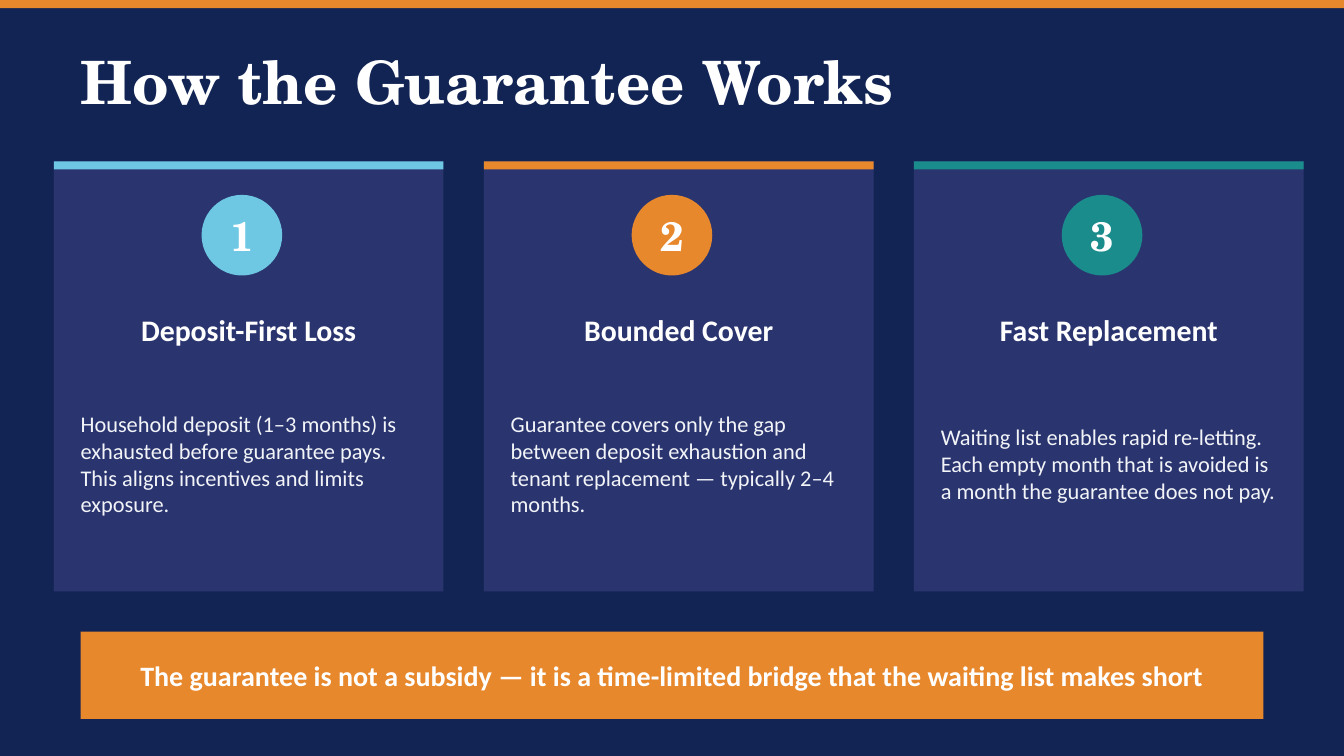
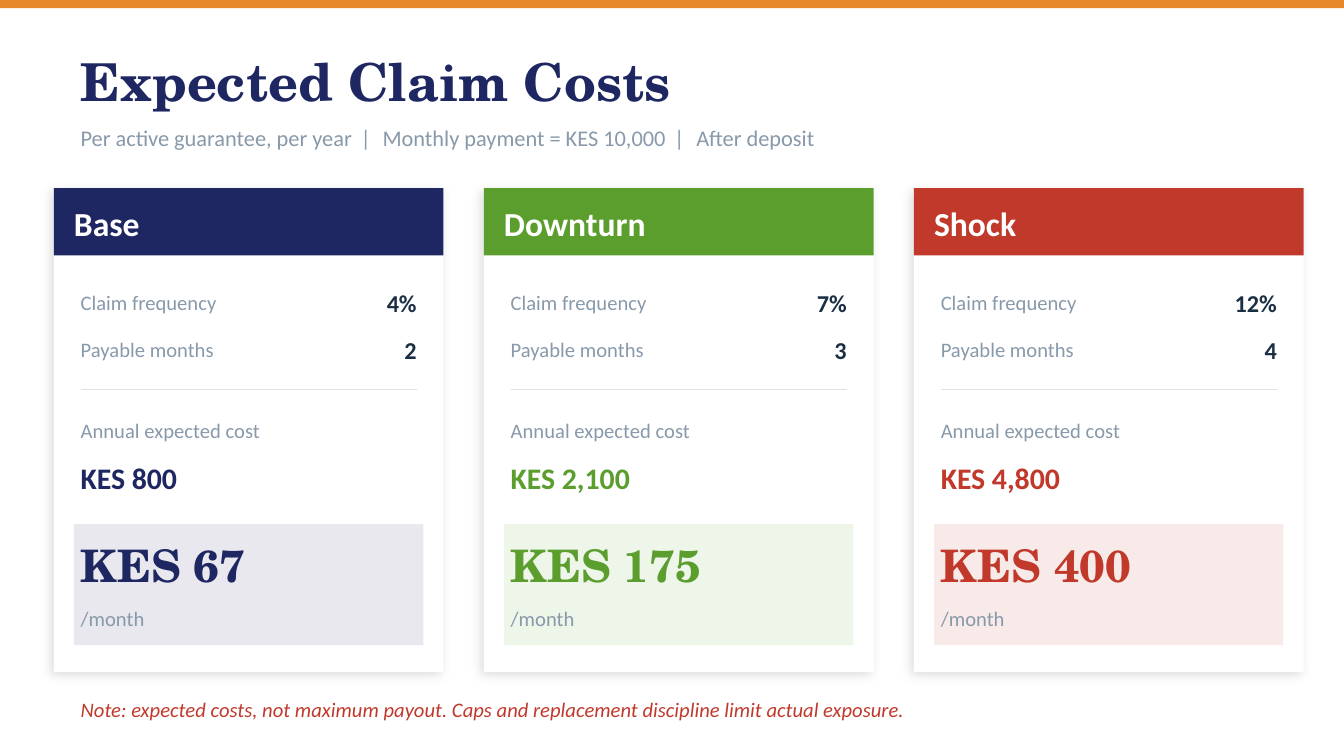
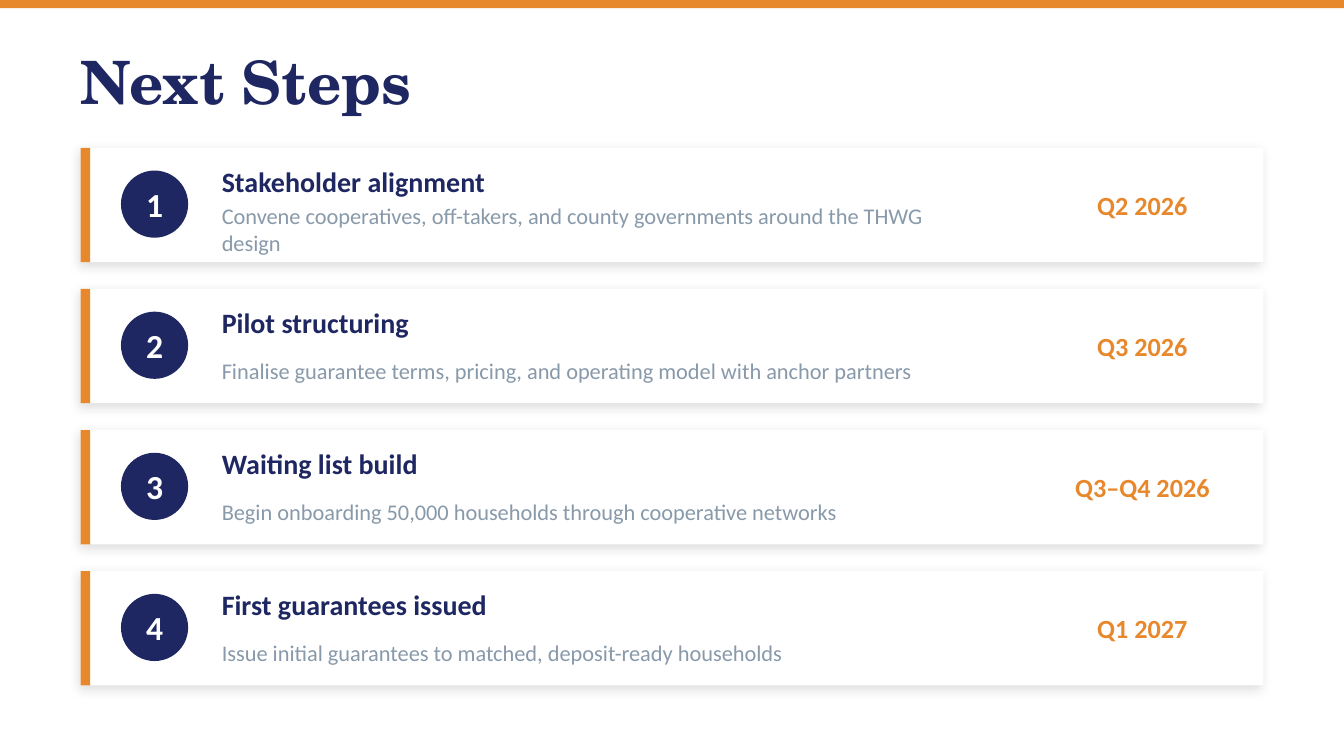
from dataclasses import dataclass

from lxml import etree
from pptx import Presentation
from pptx import util as u
from pptx.dml.color import RGBColor
from pptx.enum import shapes, text
from pptx.oxml.ns import qn


@dataclass(frozen=True)
class Theme:
    serif: str = "TeX Gyre Schola"
    sans: str = "Calibri"

    night: str = "122454"
    panel: str = "2A3570"
    navy: str = "1E2761"
    ink: str = "1A2E44"
    grey: str = "8899AA"
    rule: str = "E0E0E0"
    mist: str = "F2F4F7"
    white: str = "FFFFFF"
    black: str = "000000"
    orange: str = "E8882D"
    sky: str = "6EC8E4"
    teal: str = "1A8C8C"
    green: str = "5B9E2E"
    red: str = "C0392B"

    title: float = 42.7
    title_small: float = 37.3
    price: float = 32
    numeral: float = 29.3
    header: float = 24
    card_head: float = 21.3
    lead: float = 20
    date: float = 18.7
    value: float = 17.3
    body: float = 16
    label: float = 14.7


T = Theme()
RECT, OVAL = shapes.MSO_SHAPE.RECTANGLE, shapes.MSO_SHAPE.OVAL
LEFT, CENTER, RIGHT = text.PP_ALIGN.LEFT, text.PP_ALIGN.CENTER, text.PP_ALIGN.RIGHT


def draw(slide, kind, box, fill, opacity=None, shadow=False):
    shape = slide.shapes.add_shape(kind, *map(u.Pt, box))
    shape.fill.solid()
    shape.fill.fore_color.rgb = RGBColor.from_string(fill)
    shape.line.fill.background()
    shape.shadow.inherit = False
    properties = shape._element.spPr
    if opacity:
        color = properties.find(".//" + qn("a:srgbClr"))
        etree.SubElement(color, qn("a:alpha"), val=str(opacity * 1000))
    if shadow:
        outer = etree.SubElement(
            properties.find(qn("a:effectLst")), qn("a:outerShdw"),
            blurRad=str(u.Pt(8)), dist=str(u.Pt(3)), dir=str(135 * 60000),
            algn="bl", rotWithShape="0")
        color = etree.SubElement(outer, qn("a:srgbClr"), val=T.black)
        etree.SubElement(color, qn("a:alpha"), val="12000")
    return shape


def write(holder, *parts, box=None, size=T.body, color=T.white, font=T.sans,
          bold=False, italic=False, align=LEFT):
    """Write one paragraph into a shape, or into a new text box on a slide if box is given."""
    if box:
        holder = holder.shapes.add_textbox(*map(u.Pt, box))
    frame = holder.text_frame
    frame.margin_left = frame.margin_right = frame.margin_top = frame.margin_bottom = 0
    frame.auto_size = text.MSO_AUTO_SIZE.NONE
    frame.word_wrap = True
    frame.vertical_anchor = text.MSO_ANCHOR.MIDDLE
    paragraph = frame.paragraphs[0]
    paragraph.alignment = align
    for part in parts:
        run = paragraph.add_run()
        run.text = part
        run.font.size = u.Pt(size)
        run.font.name = font
        run.font.bold = bold
        run.font.italic = italic
        run.font.color.rgb = RGBColor.from_string(color)
    return paragraph


deck = Presentation()
deck.slide_width, deck.slide_height = u.Pt(960), u.Pt(540)
title_only = deck.slide_layouts[5]

margin, content_width = 57.6, 844.8
card_left, card_width, card_pitch = 38.4, 278.4, 307.2
pad, inner_width = 19.2, 240

# Background, title and top band of every slide
pages = []
for heading, size, color, background in (
    ("How the Guarantee Works", T.title, T.white, T.night),
    ("Expected Claim Costs", T.title_small, T.navy, T.white),
    ("Next Steps", T.title, T.navy, T.white),
):
    page = deck.slides.add_slide(title_only)
    page.background.fill.solid()
    page.background.fill.fore_color.rgb = RGBColor.from_string(background)
    draw(page, RECT, (0, 0, 960, 5.76), T.orange)
    title = page.shapes.title
    title.left, title.top, title.width, title.height = map(u.Pt, (margin, 28.8, 768, 57.6))
    write(title, heading, size=size, color=color, font=T.serif, bold=True)
    pages.append(page)
guarantee, costs, steps = pages

# How the guarantee works
principles = (
    ("Deposit-First Loss", T.sky,
     "Household deposit (1–3 months) is exhausted before guarantee pays. "
     "This aligns incentives and limits exposure."),
    ("Bounded Cover", T.orange,
     "Guarantee covers only the gap between deposit exhaustion and "
     "tenant replacement — typically 2–4 months."),
    ("Fast Replacement", T.teal,
     "Waiting list enables rapid re-letting. Each empty month that is avoided "
     "is a month the guarantee does not pay."),
)
for i, (principle, accent, explanation) in enumerate(principles):
    left = card_left + i * card_pitch
    draw(guarantee, RECT, (left, 115.2, card_width, 307.2), T.panel)
    draw(guarantee, RECT, (left, 115.2, card_width, 5.76), accent)
    badge = draw(guarantee, OVAL, (left + 105.6, 139.2, 57.6, 57.6), accent)
    write(badge, str(i + 1), size=T.numeral, font=T.serif, bold=True, align=CENTER)
    write(guarantee, principle, box=(left + pad, 211.2, inner_width, 48),
          size=T.card_head, bold=True, align=CENTER)
    write(guarantee, explanation, box=(left + pad, 264, inner_width, 134.4), color=T.mist)

takeaway = draw(guarantee, RECT, (margin, 451.2, content_width, 62.4), T.orange)
write(takeaway,
      "The guarantee is not a subsidy — it is a time-limited bridge that the waiting list makes short",
      size=T.lead, bold=True, align=CENTER)

# Expected claim costs
separator = " | "
assumptions = write(
    costs, "Per active guarantee, per year", separator, "Monthly payment = KES 10,000",
    separator, "After deposit", box=(margin, 81.6, 768, 33.6), color=T.grey)
for run in assumptions.runs:
    if run.text == separator:
        run._r.get_or_add_rPr().set("spc", "240")

scenarios = (
    ("Base", T.navy, "4%", "2", "KES 800", "KES 67"),
    ("Downturn", T.green, "7%", "3", "KES 2,100", "KES 175"),
    ("Shock", T.red, "12%", "4", "KES 4,800", "KES 400"),
)
for i, (scenario, accent, frequency, months, annual, monthly) in enumerate(scenarios):
    left = card_left + i * card_pitch
    inner = left + pad
    draw(costs, RECT, (left, 134.4, card_width, 345.6), T.white, shadow=True)
    draw(costs, RECT, (left, 134.4, card_width, 48), accent)
    write(costs, scenario, box=(left + 14.4, 136, 249.6, 46), size=T.header, bold=True)
    for top, measure, figure in ((201.6, "Claim frequency", frequency),
                                 (235.2, "Payable months", months)):
        write(costs, measure, box=(inner, top, 172.8, 28.8), size=T.label, color=T.grey)
        write(costs, figure, box=(inner + 172.8, top, 67.2, 28.8),
              size=T.value, color=T.ink, bold=True, align=RIGHT)
    divider = costs.shapes.add_connector(
        shapes.MSO_CONNECTOR.STRAIGHT, *map(u.Pt, (inner, 278.4, inner + inner_width, 278.4)))
    divider.line.color.rgb = RGBColor.from_string(T.rule)
    divider.line.width = u.Pt(1)
    etree.SubElement(divider._element.spPr, qn("a:effectLst"))
    write(costs, "Annual expected cost", box=(inner, 292.8, inner_width, 28.8),
          size=T.label, color=T.grey)
    write(costs, annual, box=(inner, 321.6, inner_width, 38.4),
          size=T.card_head, color=accent, bold=True)
    draw(costs, RECT, (left + 14.4, 374.4, 249.6, 86.4), accent, opacity=10)
    write(costs, monthly, box=(inner, 379.2, inner_width, 48),
          size=T.price, color=accent, font=T.serif, bold=True)
    write(costs, "/month", box=(inner, 427.2, inner_width, 28.8), size=T.label, color=T.grey)

write(costs,
      "Note: expected costs, not maximum payout. "
      "Caps and replacement discipline limit actual exposure.",
      box=(margin, 489.6, content_width, 33.6), size=T.label, color=T.red, italic=True)

# Next steps
milestones = (
    ("Stakeholder alignment", "Q2 2026",
     "Convene cooperatives, off-takers, and county governments around the THWG design"),
    ("Pilot structuring", "Q3 2026",
     "Finalise guarantee terms, pricing, and operating model with anchor partners"),
    ("Waiting list build", "Q3–Q4 2026",
     "Begin onboarding 50,000 households through cooperative networks"),
    ("First guarantees issued", "Q1 2027",
     "Issue initial guarantees to matched, deposit-ready households"),
)
for i, (milestone, quarter, task) in enumerate(milestones):
    top = 105.6 + i * 100.8
    draw(steps, RECT, (margin, top, content_width, 81.6), T.white, shadow=True)
    draw(steps, RECT, (margin, top, 6.72, 81.6), T.orange)
    badge = draw(steps, OVAL, (86.4, top + 16.2, 48, 48), T.navy)
    write(badge, str(i + 1), size=T.header, bold=True, align=CENTER)
    write(steps, milestone, box=(158.4, top + 7.2, 528, 33.6),
          size=T.lead, color=T.navy, bold=True)
    write(steps, task, box=(158.4, top + 41.2, 528, 33.6), color=T.grey)
    write(steps, quarter, box=(748.8, top + 9.6, 134.4, 62.4),
          size=T.date, color=T.orange, bold=True, align=CENTER)

deck.save("out.pptx")
